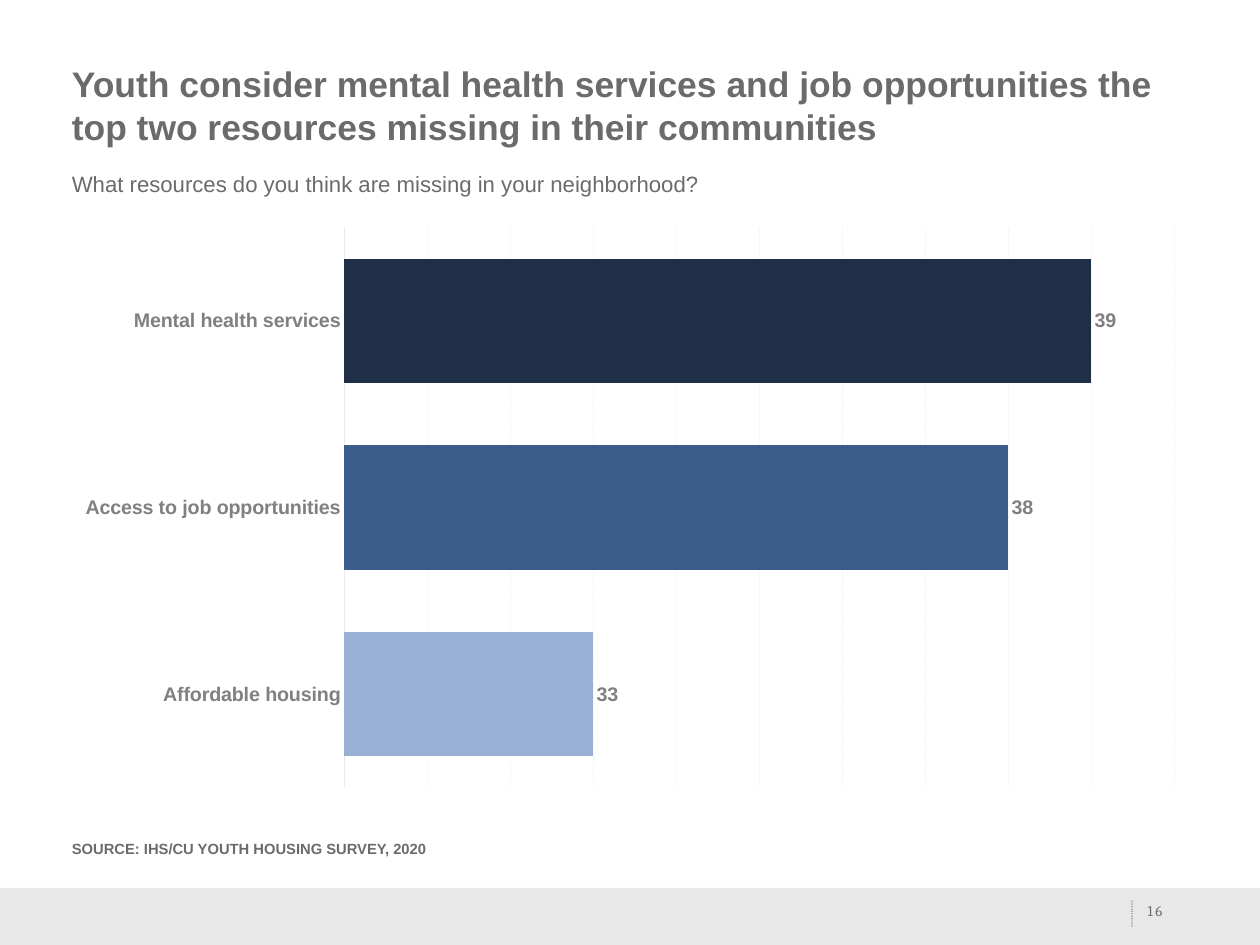
from pptx import Presentation, oxml, util as u
from pptx.chart import data
from pptx.dml import color
from pptx.enum import chart as ch, dml, shapes, text
from pptx.oxml import ns

SCALE = 10320
GREY, LABEL = "6B6B6B", "808080"
LEFT, WIDTH = 63, 1134
LABEL_FONT = {"name": "Arial", "size": u.Pt(16), "bold": True}


def px(*lengths):
    """Turn whole pixels into EMU."""
    return [u.Emu(n * SCALE) for n in lengths]


def rgb(value):
    """Turn a hex string into a colour."""
    return color.RGBColor.from_string(value)


def paint(fill, value):
    """Give a fill one solid colour."""
    fill.solid()
    fill.fore_color.rgb = rgb(value)


def style_line(line, value, points, dash=None):
    """Set colour, width and dash of a line."""
    paint(line.fill, value)
    line.width = u.Pt(points)
    if dash:
        line.dash_style = dash


def apply(target, values):
    """Set attributes from a dict of format values."""
    for name, value in values.items():
        setattr(target, name, value)


def style_font(font, values, value):
    """Set format values and colour of a font."""
    apply(font, values)
    font.color.rgb = rgb(value)


def place(sp, left, top, width, height):
    """Move and size a shape."""
    sp.left, sp.top, sp.width, sp.height = px(left, top, width, height)


def write(sp, words, font, frame, para):
    """Fill a shape with one formatted paragraph and return its run."""
    tf = sp.text_frame
    apply(tf, {"word_wrap": True, "auto_size": text.MSO_AUTO_SIZE.NONE, **frame})
    p = tf.paragraphs[0]
    apply(p, {"space_before": u.Pt(0), **para})
    r = p.add_run()
    r.text = words
    style_font(r.font, font, GREY)
    return r


def add_heading(sp, words, top, height, size, bold):
    """Fill a left-aligned text placeholder."""
    place(sp, LEFT, top, WIDTH, height)
    write(sp, words, {"name": "Arial", "size": u.Pt(size), "bold": bold},
          {"vertical_anchor": text.MSO_ANCHOR.TOP},
          {"alignment": text.PP_ALIGN.LEFT, "line_spacing": 1.0})


def add_footer(s, number):
    """Draw the footer band, its dotted divider and the page number."""
    band = s.shapes.add_shape(shapes.MSO_SHAPE.RECTANGLE, *px(0, 888, 1260, 57))
    band.shadow.inherit = False
    paint(band.fill, "E8E8E8")
    band.line.fill.background()

    divider = s.shapes.add_connector(shapes.MSO_CONNECTOR.STRAIGHT, *px(1132, 901, 1132, 927))
    style_line(divider.line, GREY, 1, dml.MSO_LINE.ROUND_DOT)
    divider.element.spPr.append(oxml.parse_xml(f"<a:effectLst {ns.nsdecls('a')}/>"))
    for clr in divider.element.xpath("./p:spPr/a:ln//a:srgbClr"):
        clr.append(oxml.parse_xml(f'<a:alpha {ns.nsdecls("a")} val="75000"/>'))

    box = s.shapes.add_textbox(*px(1139, 869, 32, 51))
    margins = dict.fromkeys(("margin_left", "margin_top", "margin_right", "margin_bottom"), 0)
    r = write(box, number, {"name": "Cambria", "size": u.Pt(12)},
              {"vertical_anchor": text.MSO_ANCHOR.BOTTOM, **margins},
              {"alignment": text.PP_ALIGN.CENTER, "line_spacing": 1.5})
    r.font._element.set("spc", "200")


def set_plot_area(chart, x, y, w, h):
    """Fix the inner plot area as fractions of the chart."""
    area = chart._chartSpace.xpath(".//c:plotArea")[0]
    for old in area.xpath("./c:layout"):
        area.remove(old)
    parts = "".join(f'<c:{k} val="{v}"/>' for k, v in (
        ("layoutTarget", "inner"), ("xMode", "edge"), ("yMode", "edge"),
        ("x", x), ("y", y), ("w", w), ("h", h)))
    area.insert(0, oxml.parse_xml(
        f"<c:layout {ns.nsdecls('c')}><c:manualLayout>{parts}</c:manualLayout></c:layout>"))


def add_bars(s, rows):
    """Add the bar chart from rows of category, value and colour."""
    names, values, colours = zip(*rows)
    cd = data.CategoryChartData()
    cd.categories = names
    cd.add_series("Series 1", values)
    chart = s.shapes.add_chart(ch.XL_CHART_TYPE.BAR_CLUSTERED,
                               *px(LEFT, 216, WIDTH, 585), cd).chart
    apply(chart, {"has_title": False, "has_legend": False})
    style_font(chart.font, {"name": "Arial", "size": u.Pt(10)}, GREY)
    set_plot_area(chart, 0.248, 0.02, 0.732, 0.957)

    cat, val = chart.category_axis, chart.value_axis
    apply(cat, {"major_tick_mark": ch.XL_TICK_MARK.NONE, "has_major_gridlines": False})
    style_font(cat.tick_labels.font, LABEL_FONT, LABEL)
    style_line(cat.format.line, "E9E9E9", 0.75)
    apply(val, {"minimum_scale": 30, "maximum_scale": 40, "major_unit": 1,
                "has_major_gridlines": True, "visible": False})
    style_line(val.major_gridlines.format.line, "F2F2F2", 0.75, dml.MSO_LINE.ROUND_DOT)

    plot = chart.plots[0]
    apply(plot, {"gap_width": 50, "vary_by_categories": False})
    series = plot.series[0]
    for i, value in enumerate(colours):
        paint(series.points[i].format.fill, value)
    labels = series.data_labels
    apply(labels, {"show_value": True, "position": ch.XL_LABEL_POSITION.OUTSIDE_END})
    style_font(labels.font, LABEL_FONT, LABEL)


def main():
    """Build the slide and save it."""
    prs = Presentation()
    prs.slide_width, prs.slide_height = px(1260, 945)
    s = prs.slides.add_slide(prs.slide_layouts.get_by_name("Comparison"))
    title, question, source = (s.placeholders[i] for i in (0, 1, 3))
    for i in (2, 4):
        spare = s.placeholders[i].element
        spare.getparent().remove(spare)

    add_footer(s, "16")
    add_heading(source, "SOURCE: IHS/CU YOUTH HOUSING SURVEY, 2020", 835, 53, 12, True)
    add_heading(question, "What resources do you think are missing in your neighborhood?",
                166, 51, 18, False)
    add_heading(title, "Youth consider mental health services and job opportunities "
                "the top two resources missing in their communities", 58, 66, 28.8, True)
    add_bars(s, [("Affordable housing", 33, "98B0D3"),
                 ("Access to job opportunities", 38, "3C5C8C"),
                 ("Mental health services", 39, "1F2F47")])
    prs.save("out.pptx")


if __name__ == "__main__":
    main()
